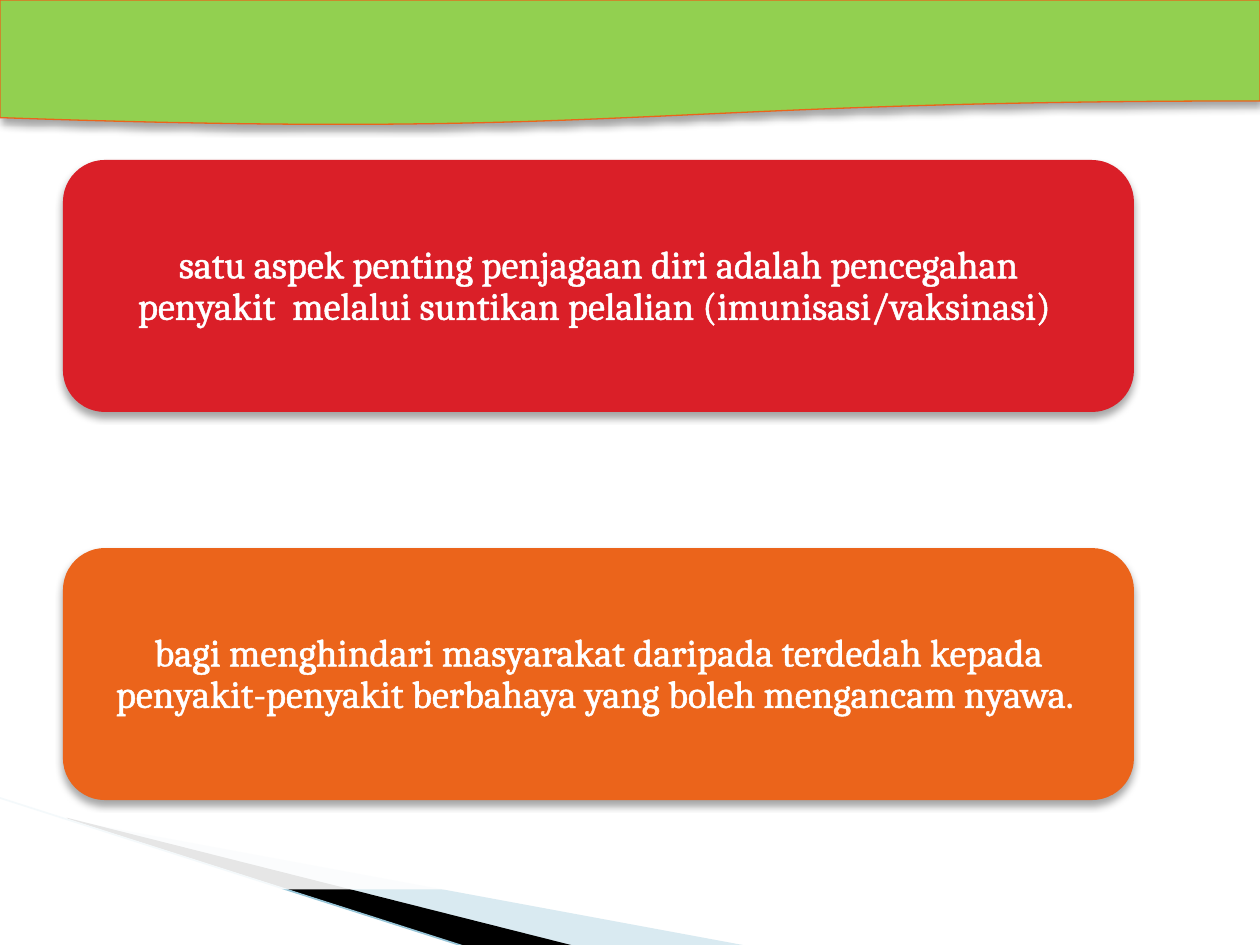
from dataclasses import dataclass

from lxml.etree import SubElement
from pptx import Presentation
from pptx.dml.color import RGBColor
from pptx.enum.shapes import MSO_CONNECTOR as Link, MSO_SHAPE as Kind
from pptx.enum.text import MSO_ANCHOR as Anchor, PP_ALIGN as Align
from pptx.oxml.ns import qn
from pptx.util import Inches, Pt

HUES = {
    "white": "FFFFFF", "black": "000000", "red": "DA1F28", "orange": "EB641B",
    "green": "92D050", "mist": "A0CBDC", "sky": "97C5D8",
}
FONT = "Cambria"


@dataclass
class Card:
    top: float
    hue: str
    text: str


@dataclass
class Wedge:
    points: list[tuple[float, float]]
    hue: str
    alpha: int = 100


CARDS = [
    Card(1.27, "red", "satu aspek penting penjagaan diri adalah pencegahan "
         "penyakit  melalui suntikan pelalian (imunisasi/vaksinasi) "),
    Card(4.35, "orange", "bagi menghindari masyarakat daripada terdedah kepada "
         "penyakit-penyakit berbahaya yang boleh mengancam nyawa. "),
]
WEDGES = [
    Wedge([(0.55, 6.51), (5.95, 7.51), (4.56, 7.51), (0.55, 6.5)], "mist", 40),
    Wedge([(0.53, 6.49), (4.57, 7.51), (3.72, 7.52), (0.54, 6.5)], "black"),
]


def rgb(hue: str) -> RGBColor:
    return RGBColor.from_string(HUES[hue])


def paint(shape, hue: str, alpha: int = 100) -> None:
    """Fill a shape, without line or shadow."""
    shape.shadow.inherit = False
    shape.fill.solid()
    shape.fill.fore_color.rgb = rgb(hue)
    shape.line.fill.background()
    if alpha < 100:
        tone = shape.fill._xPr.find(qn("a:solidFill"))[0]
        SubElement(tone, qn("a:alpha"), val=str(alpha * 1000))


def shade(fx, blur: float, dist: float, angle: int, alpha: int) -> None:
    """Put a black outer shadow in an effect list."""
    node = SubElement(fx, qn("a:outerShdw"), blurRad=str(Pt(blur)),
                      dist=str(Pt(dist)), dir=str(angle * 60000),
                      algn="ctr", rotWithShape="0")
    tone = SubElement(node, qn("a:srgbClr"), val=HUES["black"])
    SubElement(tone, qn("a:alpha"), val=str(alpha * 1000))


def lift(shape) -> None:
    shade(shape._element.spPr.find(qn("a:effectLst")), 4, 3, 90, 35)


def add_box(shapes, kind, left: float, top: float, wide: float, high: float):
    return shapes.add_shape(kind, Inches(left), Inches(top),
                            Inches(wide), Inches(high))


def add_wedge(shapes, wedge: Wedge) -> None:
    first, *rest = [(Inches(x), Inches(y)) for x, y in wedge.points]
    path = shapes.build_freeform(*first)
    path.add_line_segments(rest, close=True)
    paint(path.convert_to_shape(), wedge.hue, wedge.alpha)


def add_text(shapes, card: Card) -> None:
    box = shapes.add_textbox(Inches(0.6), Inches(card.top + 0.1),
                             Inches(8.3), Inches(1.81))
    frame = box.text_frame
    frame.word_wrap = True
    frame.vertical_anchor = Anchor.MIDDLE
    frame.margin_left = frame.margin_right = Inches(0.26)
    frame.margin_top = frame.margin_bottom = 0
    para = frame.paragraphs[0]
    para.alignment = Align.CENTER
    para.line_spacing = 0.9
    run = para.add_run()
    run.text = card.text
    font = run.font
    font.name, font.size = FONT, Pt(22)
    font.color.rgb = rgb("white")
    # White outline and soft shadow around the letters
    props = run._r.get_or_add_rPr()
    line = SubElement(props, qn("a:ln"), w=str(Pt(1.45)))
    fill = SubElement(line, qn("a:solidFill"))
    SubElement(fill, qn("a:srgbClr"), val=HUES["white"])
    props.insert(0, line)
    fx = SubElement(props, qn("a:effectLst"))
    shade(fx, 5, 0, 60, 70)
    props.insert(2, fx)


def add_card(shapes, card: Card) -> None:
    band = add_box(shapes, Kind.RECTANGLE, 0, card.top + 1, 10, 1.71)
    paint(band, "white", 90)
    panel = add_box(shapes, Kind.ROUNDED_RECTANGLE, 0.5, card.top, 8.5, 2)
    paint(panel, card.hue)
    lift(panel)
    add_text(shapes, card)


def main() -> None:
    deck = Presentation()
    deck.slide_width, deck.slide_height = Inches(10), Inches(7.5)
    shapes = deck.slides.add_slide(deck.slide_layouts[6]).shapes

    # Corner decoration
    for wedge in WEDGES:
        add_wedge(shapes, wedge)
    edge = shapes.add_connector(Link.STRAIGHT, Inches(-0.01), Inches(6.33),
                                Inches(3.71), Inches(7.52))
    edge.line.color.rgb = rgb("sky")
    edge.line.width = Pt(0.95)
    SubElement(edge._element.spPr, qn("a:effectLst"))

    # Message cards
    for card in CARDS:
        add_card(shapes, card)

    # Wavy header
    head = add_box(shapes, Kind.FLOWCHART_DOCUMENT, 0, 0, 10, 1)
    paint(head, "green")
    head.line.color.rgb = rgb("orange")
    head.line.width = Pt(0.75)
    lift(head)

    deck.save("out.pptx")


if __name__ == "__main__":
    main()
